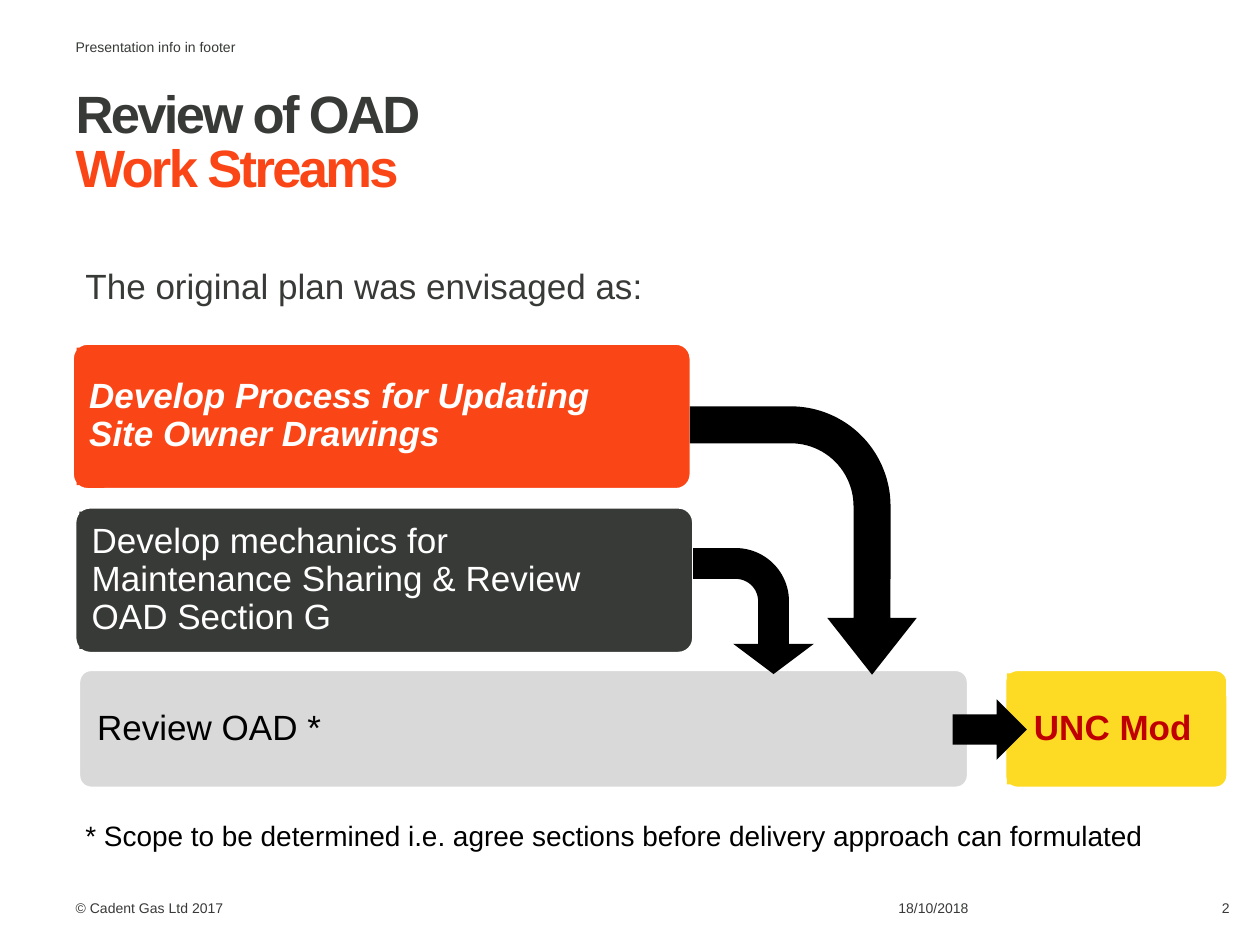
from pptx import Presentation, util as u
from pptx.dml.color import RGBColor
from pptx.enum import shapes as sh, text as tx

# Grid: 100 columns by 75 rows
WIDE, HIGH = u.Inches(10), u.Inches(7.5)
COL, ROW = WIDE / 100, HIGH / 75
DARK, RED, GREY, GOLD = "373A36", "FA4616", "D9D9D9", "FDDA24"
BLACK, WHITE, BRICK = "000000", "FFFFFF", "C00000"
KIND = sh.MSO_SHAPE
LEFT, MID, RIGHT = tx.PP_ALIGN.LEFT, tx.PP_ALIGN.CENTER, tx.PP_ALIGN.RIGHT
TOP, CORE, BASE = tx.MSO_ANCHOR.TOP, tx.MSO_ANCHOR.MIDDLE, tx.MSO_ANCHOR.BOTTOM


def rgb(code):
    return RGBColor.from_string(code)


def span(box):
    x, y, w, h = box
    return [u.Emu(round(n)) for n in (x * COL, y * ROW, w * COL, h * ROW)]


def frame(item, pad, anchor, wrap=True):
    body = item.text_frame
    body.word_wrap = wrap
    body.vertical_anchor = anchor
    body.margin_left = body.margin_right = u.Inches(pad[0])
    body.margin_top = body.margin_bottom = u.Inches(pad[1])
    return body


def style(para, size, ink, bold=False, slant=False, align=LEFT, lead=1.0):
    para.alignment = align
    para.line_spacing = lead
    font = para.font
    font.name, font.size = "Arial", u.Pt(size)
    font.bold, font.italic = bold, slant
    font.color.rgb = rgb(ink)


def note(page, box, words, size=8, ink=DARK, pad=(0, 0), anchor=TOP,
         wrap=True, **look):
    item = page.shapes.add_textbox(*span(box))
    body = frame(item, pad, anchor, wrap)
    body.text = words
    style(body.paragraphs[0], size, ink, **look)
    return body


def shape(host, kind, box, fill, line=None, adj=(), turn=0):
    item = host.add_shape(kind, *span(box))
    item.shadow.inherit = False
    item.fill.solid()
    item.fill.fore_color.rgb = rgb(fill)
    if line:
        item.line.color.rgb = rgb(line)
        item.line.width = u.Pt(1)
    else:
        item.line.fill.background()
    for i, part in enumerate(adj):
        item.adjustments[i] = part
    item.rotation = turn
    return item


def head(page, box):
    """Two-line title in two colours."""
    item = page.shapes.title
    item.left, item.top, item.width, item.height = span(box)
    body = frame(item, (0, 0), TOP)
    body.auto_size = tx.MSO_AUTO_SIZE.NONE
    para = body.paragraphs[0]
    style(para, 30, DARK, bold=True, lead=0.85)
    for i, (words, ink) in enumerate([("Review of OAD", DARK),
                                      ("Work Streams", RED)]):
        if i:
            para.add_line_break()
        run = para.add_run()
        run.text = words
        run.font.color.rgb = rgb(ink)
        run.font.size = u.Pt(30)
        run.font._element.set("spc", "-150")


def card(page, box, words, fill, ink, **look):
    """Rounded card with its label set inside, as one group."""
    x, y, w, h = box
    group = page.shapes.add_group_shape().shapes
    shape(group, KIND.ROUNDED_RECTANGLE, box, fill, WHITE, [0.1])
    inner = (x + 0.006 * w, y + 0.026 * h, 0.956 * w, 0.948 * h)
    label = shape(group, KIND.RECTANGLE, inner, fill)
    body = frame(label, (0.1, 0.1), CORE)
    body.text = words
    style(body.paragraphs[0], 20, ink, lead=0.9, **look)


def flow(page):
    """Work streams and the arrows that join them."""
    card(page, (5.8, 27.3, 49, 11.5),
         "Develop Process for Updating Site Owner Drawings",
         RED, WHITE, bold=True, slant=True)
    card(page, (6, 40.3, 49, 11.5),
         "Develop mechanics for Maintenance Sharing & Review OAD Section G",
         DARK, WHITE)
    card(page, (6.3, 53.2, 70.5, 9.3), "Review OAD *", GREY, BLACK)
    card(page, (79.8, 53.2, 17.6, 9.3), "UNC Mod", GOLD, BRICK,
         bold=True, align=MID)
    for box, thick, tip in [((53.1, 33.9, 21.3, 18), 0.163, 0.197),
                            ((54.8, 43.7, 10, 9.6), 0.255, 0.334)]:
        shape(page.shapes, KIND.BENT_ARROW, box, BLACK,
              adj=(thick, tip, 0.25, 0.44), turn=90)
    shape(page.shapes, KIND.RIGHT_ARROW, (75.6, 55.5, 5.9, 4.8), BLACK)


def edge(page):
    """Small texts at the top and foot of the page."""
    note(page, (6, 3.1, 46.4, 3), "Presentation info in footer")
    for x, w, words, align in [(6, 19.9, "© Cadent Gas Ltd 2017", LEFT),
                               (71.3, 11.4, "18/10/2018", LEFT),
                               (90.5, 7.1, "2", RIGHT)]:
        note(page, (x, 69.7, w, 3), words, anchor=BASE, align=align)


def main():
    deck = Presentation()
    deck.slide_width, deck.slide_height = WIDE, HIGH
    page = deck.slides.add_slide(deck.slide_layouts[5])
    head(page, (6, 7.2, 65.3, 14.5))
    edge(page)
    # Lead-in, diagram and footnote
    note(page, (5.8, 20.9, 84.2, 11), "The original plan was envisaged as:",
         size=20, pad=(0.1, 0.05), align=tx.PP_ALIGN.JUSTIFY, lead=0.9)
    flow(page)
    foot = note(page, (5.8, 64.5, 87, 3.7),
                "* Scope to be determined i.e. agree sections before delivery"
                " approach can formulated",
                size=16, ink=BLACK, pad=(0.1, 0.05), wrap=False)
    foot.auto_size = tx.MSO_AUTO_SIZE.SHAPE_TO_FIT_TEXT
    deck.save("out.pptx")


if __name__ == "__main__":
    main()
